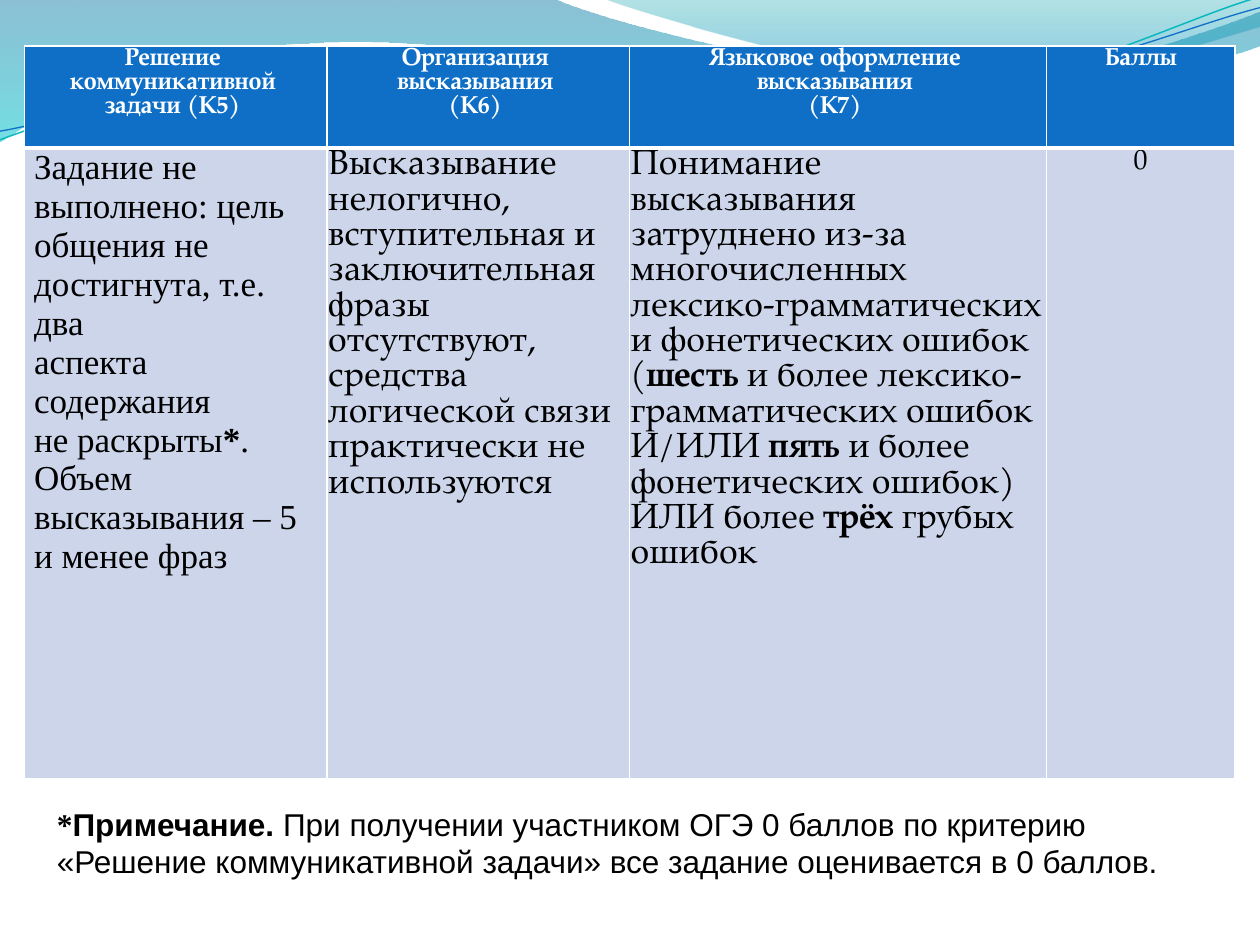
from dataclasses import dataclass
from typing import NamedTuple

from lxml.etree import SubElement
from pptx import Presentation
from pptx.dml.color import RGBColor
from pptx.enum.text import MSO_ANCHOR, MSO_AUTO_SIZE, PP_ALIGN
from pptx.oxml.ns import qn
from pptx.util import Pt


@dataclass(frozen=True)
class Theme:
    white: str = "FFFFFF"
    black: str = "000000"
    head: str = "0F6FC6"
    body: str = "CCD5EA"
    teal: str = "0AB8BF"
    deep_blue: str = "0074A1"
    cyan: str = "00C6CF"
    sea: str = "00A1A9"
    sky: str = "008BBF"
    serif: str = "TeX Gyre Pagella"
    roman: str = "Times New Roman"
    sans: str = "Arial"
    head_size: float = 14
    body_size: float = 20
    score_size: float = 16
    note_size: float = 18


class Stop(NamedTuple):
    pos: float
    color: str
    alpha: int


class Wave(NamedTuple):
    segments: list
    stops: tuple = ()
    line: str = ""
    width: float = 0
    rotation: float = 0


class Span(NamedTuple):
    text: str
    bold: bool = False
    font: str = ""


class Style(NamedTuple):
    font: str
    size: float
    color: str
    align: PP_ALIGN
    spacing: float


class Cell(NamedTuple):
    paras: list
    style: Style
    fill: str
    margins: tuple = (0.7, 0.7, 0.7, 0)


T = Theme()
LEFT, CENTER, JUSTIFY = PP_ALIGN.LEFT, PP_ALIGN.CENTER, PP_ALIGN.JUSTIFY
HEAD = Style(T.serif, T.head_size, T.white, CENTER, 13.8)
TASK = Style(T.roman, T.body_size, T.black, LEFT, 22.25)
BODY = Style(T.serif, T.body_size, T.black, LEFT, 20.2)
SCORE = Style(T.serif, T.score_size, T.black, CENTER, 16)
NOTE = Style(T.sans, T.note_size, T.black, JUSTIFY, 0)

BANDS = [
    Wave([(0, 0), (316.8, -0.7), (342.7, 12.2, 478.1, 45.4, 545.8, 45.4),
          (614.2, 45.4, 689.8, 18.7, 720, 6.5), (720.7, 25.9),
          (707.8, 31.7, 626.4, 54.7, 537.1, 54), (447.8, 54, 275, 20.2, 185, 24.5),
          (92.9, 25.9, 33.1, 59.8, -0.7, 81.4), (0, 0)],
         (Stop(0, T.deep_blue, 45), Stop(1, T.cyan, 55))),
    Wave([(344.9, -0.7), (366.5, 7.9, 491, 44.6, 553.7, 46.8),
          (616.3, 49.7, 691.9, 23, 720, 15.1), (720, 0), (344.9, -0.7)],
         (Stop(0, T.sea, 30), Stop(0.8, T.sky, 45))),
]
STRANDS = [
    Wave([(-1.4, 62.9), (33.7, 51.7, 114, 29.4, 199.8, 29.9),
          (284.8, 30.3, 425.8, 67.2, 512.4, 64.9), (599, 62.4, 676.4, 25.7, 720.2, 15.6)],
         line=T.teal, width=0.85, rotation=357.3),
    Wave([(-1.2, 58), (33, 53.8, 118.3, 32.5, 204, 33),
          (290.5, 33.5, 428.9, 63.8, 515.5, 61.3), (601.3, 59.6, 678.5, 30.1, 721.4, 21.4)],
         line=T.head, width=0.75, rotation=357.3),
]

COLUMNS = (172.8, 172.8, 238.2, 107.9)
ROWS = (58.3, 360.7)
HEADERS = ("Решение \nкоммуникативной \nзадачи (К5) ", "Организация \nвысказывания \n(К6) ",
           "Языковое оформление \nвысказывания \n(К7) ", "Баллы")
CELLS = [
    [Cell([[Span(text, True)]], HEAD, T.head) for text in HEADERS],
    [
        Cell([[Span("Задание не выполнено: цель общения не достигнута, т.е. два")],
              [Span("аспекта содержания")],
              [Span("не раскрыты"), Span("*", True), Span(".")],
              [Span("Объем высказывания – 5 и менее фраз")]], TASK, T.body, (5.4, 0, 5.4, 0)),
        Cell([[Span("Высказывание нелогично, вступительная и заключительная фразы отсутствуют, "
                    "средства логической связи практически не используются")]], BODY, T.body),
        Cell([[Span("Понимание высказывания затруднено из-за многочисленных "
                    "лексико-грамматических и фонетических ошибок ("),
               Span("шесть ", True), Span("и более лексико-грамматических ошибок И/ИЛИ "),
               Span("пять ", True), Span("и более фонетических ошибок)")],
              [Span("ИЛИ более "), Span("трёх ", True), Span("грубых ошибок")]], BODY, T.body),
        Cell([[Span("0")]], SCORE, T.body),
    ],
]
NOTES = [
    [Span("*", True, T.roman), Span("Примечание. ", True),
     Span("При получении участником ОГЭ 0 баллов по критерию")],
    [Span("«Решение коммуникативной задачи» все задание оценивается в 0 баллов.")],
]


def rgb(color: str) -> RGBColor:
    return RGBColor.from_string(color)


def curve(sp, segments: list) -> None:
    nodes = iter(list(sp._element.spPr.iter(qn("a:lnTo"))))
    for seg in segments:
        group = [next(nodes) for _ in range(len(seg) // 2)]
        if len(group) == 3:
            outline = group[0].getparent()
            bez = SubElement(outline, qn("a:cubicBezTo"))
            group[0].addprevious(bez)
            for node in group:
                bez.append(node[0])
                outline.remove(node)


def draw_wave(shapes, wave: Wave) -> None:
    pts = [(Pt(seg[i]), Pt(seg[i + 1])) for seg in wave.segments for i in range(0, len(seg), 2)]
    fb = shapes.build_freeform(*pts[0])
    fb.add_line_segments(pts[1:], close=bool(wave.stops))
    sp = fb.convert_to_shape()
    curve(sp, wave.segments[1:])
    sp.shadow.inherit = False
    sp.rotation = wave.rotation
    if not wave.stops:
        sp.fill.background()
        sp.line.color.rgb = rgb(wave.line)
        sp.line.width = Pt(wave.width)
        return
    sp.line.fill.background()
    sp.fill.gradient()
    sp.fill.gradient_angle = 270
    for gs, stop in zip(sp.fill.gradient_stops, wave.stops):
        gs.position = stop.pos
        gs.color.rgb = rgb(stop.color)
    for clr, stop in zip(sp._element.spPr.iter(qn("a:srgbClr")), wave.stops):
        SubElement(clr, qn("a:alpha"), val=str(stop.alpha * 1000))


def write(tf, paras: list, style: Style) -> None:
    for i, spans in enumerate(paras):
        p = tf.add_paragraph() if i else tf.paragraphs[0]
        p.alignment = style.align
        if style.spacing:
            p.line_spacing = Pt(style.spacing)
        for span in spans:
            for n, text in enumerate(span.text.split("\n")):
                if n:
                    p.add_line_break()
                r = p.add_run()
                r.text = text
                r.font.color.rgb = rgb(style.color)
                formats = {"name": span.font or style.font, "size": Pt(style.size),
                           "bold": span.bold}
                for key, value in formats.items():
                    setattr(r.font, key, value)


def set_borders(cell, widths: dict) -> None:
    tc_pr = cell._tc.get_or_add_tcPr()
    for side, width in widths.items():
        ln = SubElement(tc_pr, qn(f"a:ln{side}"), w=str(Pt(width)))
        SubElement(SubElement(ln, qn("a:solidFill")), qn("a:srgbClr"), val=T.white)


def draw_table(shapes) -> None:
    table = shapes.add_table(len(ROWS), len(COLUMNS), Pt(14.1), Pt(26.3),
                             Pt(sum(COLUMNS)), Pt(sum(ROWS))).table
    for col, width in zip(table.columns, COLUMNS):
        col.width = Pt(width)
    for i, (row, height) in enumerate(zip(table.rows, ROWS)):
        row.height = Pt(height)
        for cell, item in zip(row.cells, CELLS[i]):
            set_borders(cell, {"L": 1, "R": 1, "T": 3 if i else 1, "B": 1 if i else 3})
            cell.fill.solid()
            cell.fill.fore_color.rgb = rgb(item.fill)
            for side, margin in zip(("left", "top", "right", "bottom"), item.margins):
                setattr(cell, f"margin_{side}", Pt(margin))
            write(cell.text_frame, item.paras, item.style)


def draw_note(shapes) -> None:
    tf = shapes.add_textbox(Pt(25.4), Pt(455.8), Pt(668.9), Pt(51.1)).text_frame
    formats = {"word_wrap": True, "auto_size": MSO_AUTO_SIZE.SHAPE_TO_FIT_TEXT,
               "vertical_anchor": MSO_ANCHOR.MIDDLE}
    for key, value in formats.items():
        setattr(tf, key, value)
    write(tf, NOTES, NOTE)


def main() -> None:
    """Build the speaking-task scoring slide."""
    prs = Presentation()
    prs.slide_width, prs.slide_height = Pt(720), Pt(540)
    s = prs.slides.add_slide(prs.slide_layouts[6])
    for band in BANDS:
        draw_wave(s.shapes, band)
    strands = s.shapes.add_group_shape()
    for strand in STRANDS:
        draw_wave(strands.shapes, strand)
    draw_table(s.shapes)
    draw_note(s.shapes)
    prs.save("out.pptx")


if __name__ == "__main__":
    main()
